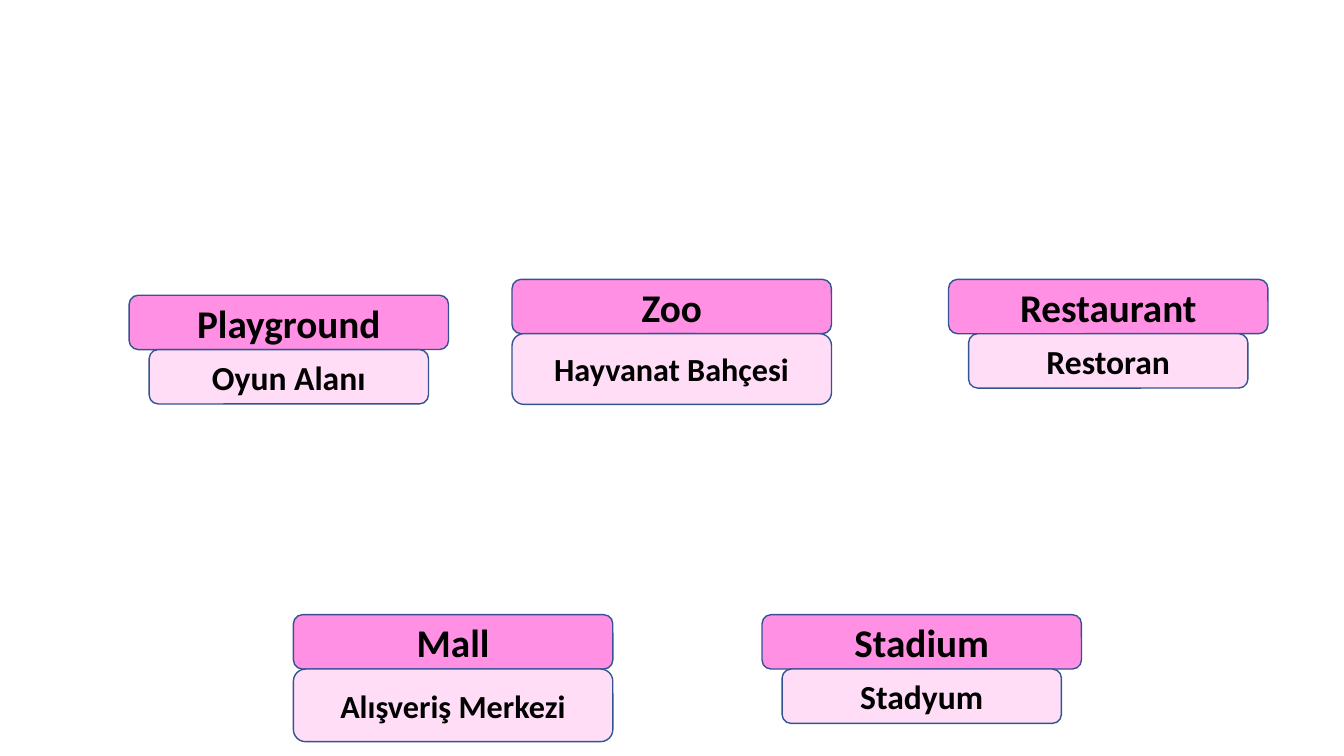
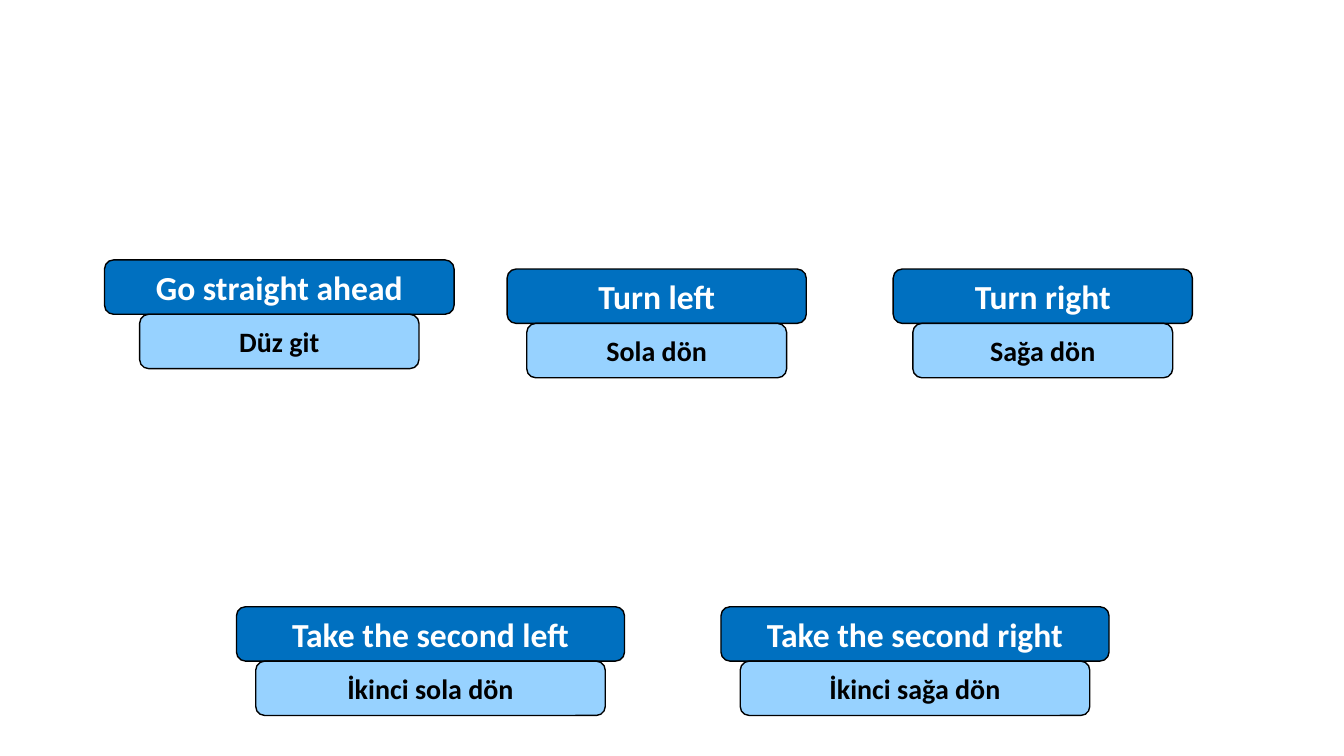
from pptx import Presentation
from pptx.dml.color import RGBColor
from pptx.enum.shapes import MSO_SHAPE
from pptx.enum.text import MSO_ANCHOR, PP_ALIGN
from pptx.util import Cm, Pt

ROUND = MSO_SHAPE.ROUNDED_RECTANGLE
MIDDLE = MSO_ANCHOR.MIDDLE
CENTER = PP_ALIGN.CENTER

BLACK = RGBColor(0x00, 0x00, 0x00)
WHITE = RGBColor(0xFF, 0xFF, 0xFF)
PINK = RGBColor(0xFF, 0x90, 0xE3)
BLUSH = RGBColor(0xFF, 0xDD, 0xF6)
NAVY = RGBColor(0x32, 0x54, 0x91)
BLUE = RGBColor(0x00, 0x70, 0xC0)
SKY = RGBColor(0x97, 0xD2, 0xFF)

FONT = "Calibri"
BAR = 1.37  # usual height of a box, in cm

PLACE = dict(head=dict(fill=PINK, edge=NAVY, size=28, color=BLACK),
             sub=dict(fill=BLUSH, edge=NAVY, size=24, color=BLACK))
ROUTE = dict(head=dict(fill=BLUE, edge=BLACK, size=24, color=WHITE),
             sub=dict(fill=SKY, edge=BLACK, size=20, color=BLACK))

# English, Turkish, centre, top, width of each box, changes to the lower box
PLACES = [
    ("Playground", "Oyun Alanı", 7.28, 7.44, 8.05, 7.04, {}),
    ("Zoo", "Hayvanat Bahçesi", 16.93, 7.04, 8.05, 8.05,
     dict(high=1.78, size=23)),
    ("Restaurant", "Restoran", 27.93, 7.04, 8.05, 7.04, {}),
    ("Stadium", "Stadyum", 23.23, 15.49, 8.05, 7.04, {}),
    ("Mall", "Alışveriş Merkezi", 11.42, 15.49, 8.05, 8.05,
     dict(high=1.83, size=23)),
]
ROUTES = [
    ("Go straight ahead", "Düz git", 7.04, 6.55, 8.81, 7.04, {}),
    ("Turn left", "Sola dön", 16.55, 6.78, 7.54, 6.55, {}),
    ("Turn right", "Sağa dön", 26.28, 6.78, 7.54, 6.55, {}),
    ("Take the second left", "İkinci sola dön", 10.85, 15.29, 9.78, 8.81, {}),
    ("Take the second right", "İkinci sağa dön", 23.06, 15.29, 9.78, 8.81, {}),
]


def write(frame, text, size=24, color=BLACK, bold=True, align=CENTER):
    frame.word_wrap = True
    frame.vertical_anchor = MIDDLE
    para = frame.paragraphs[0]
    para.alignment = align
    run = para.add_run()
    run.text = text
    font = run.font
    font.name, font.size, font.bold = FONT, Pt(size), bold
    font.color.rgb = color


class Deck:
    def __init__(self):
        self.prs = Presentation()
        self.prs.slide_width, self.prs.slide_height = Cm(33.87), Cm(19.05)
        self.slide = None
        self.style = None

    def page(self, style, cards):
        self.style = style
        self.slide = self.prs.slides.add_slide(self.prs.slide_layouts[6])
        for card in cards:
            self.card(*card)

    def box(self, text, mid, top, wide, fill, edge, high=BAR, **form):
        """Draw a rounded box centred on mid."""
        shape = self.slide.shapes.add_shape(
            ROUND, Cm(mid - wide / 2), Cm(top), Cm(wide), Cm(high))
        shape.shadow.inherit = False
        shape.fill.solid()
        shape.fill.fore_color.rgb = fill
        shape.line.color.rgb = edge
        shape.line.width = Pt(1)
        write(shape.text_frame, text, **form)

    def card(self, word, gloss, mid, top, wide, narrow, change):
        """Draw a word with its translation right below it."""
        self.box(word, mid, top, wide, **self.style["head"])
        self.box(gloss, mid, top + BAR, narrow,
                 **{**self.style["sub"], **change})


def main():
    deck = Deck()
    deck.page(PLACE, PLACES)
    deck.page(ROUTE, ROUTES)
    deck.prs.save("out.pptx")


if __name__ == "__main__":
    main()
